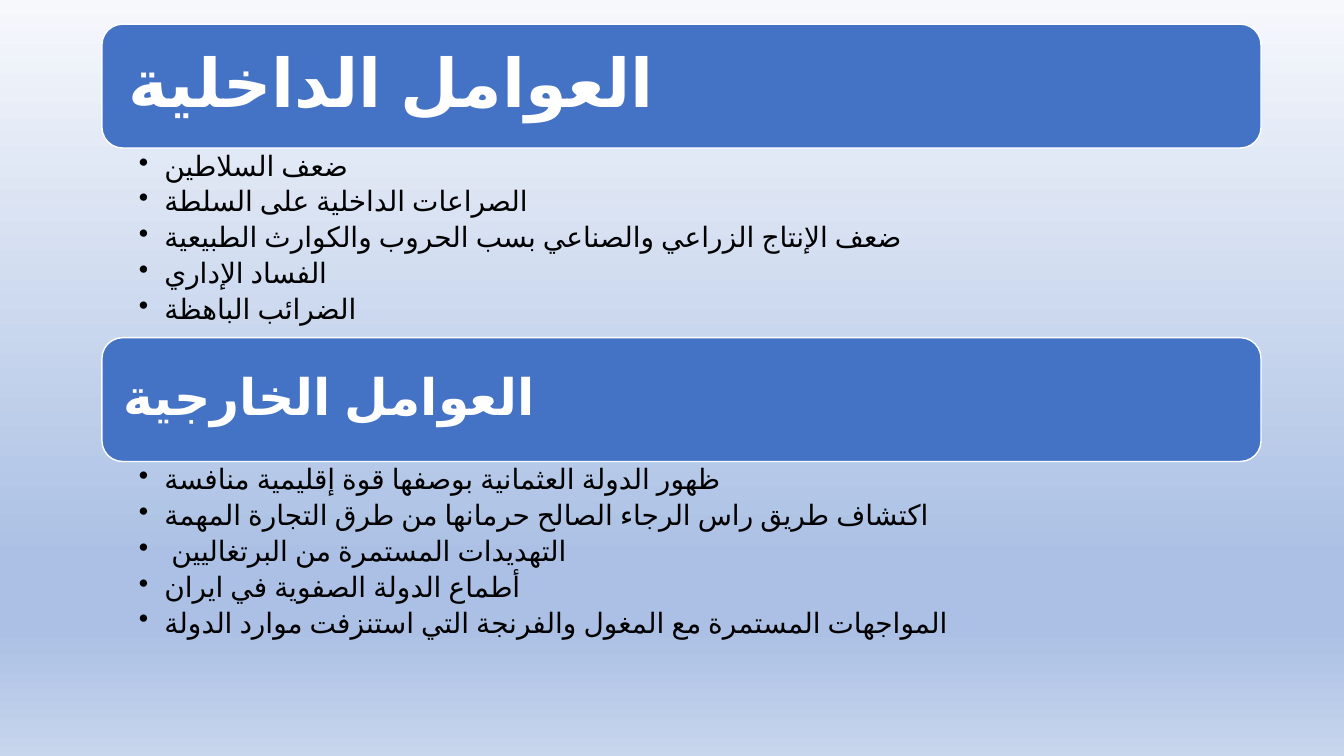
from dataclasses import dataclass

from lxml import etree
from pptx import Presentation
from pptx import util as u
from pptx.dml.color import RGBColor
from pptx.enum import lang, shapes, text
from pptx.oxml import ns

BLUE = RGBColor(0x44, 0x72, 0xC4)
WHITE = RGBColor(0xFF, 0xFF, 0xFF)
BLACK = RGBColor(0x00, 0x00, 0x00)
PALE_BLUE = RGBColor(0xF6, 0xF8, 0xFC)
MID_BLUE = RGBColor(0xAB, 0xC0, 0xE4)
LIGHT_BLUE = RGBColor(0xC7, 0xD5, 0xED)
BACKGROUND_STOPS = ((0, PALE_BLUE), (74, MID_BLUE), (83, MID_BLUE), (100, LIGHT_BLUE))

# Layout in centimetres
LEFT, TOP, WIDTH = 2.57, 0.61, 29.21
BANNER_HEIGHT, LIST_HEIGHT = 3.12, 4.78
TITLE_MARGIN = 0.15
BULLET_INDENT = 0.64


@dataclass(frozen=True)
class Section:
    title: str
    title_font: str
    title_size: int
    title_inset: float
    factors: tuple[str, ...]


SECTIONS = (
    Section("العوامل الداخلية", "Lato", 48, 0.51, (
        "ضعف السلاطين",
        "الصراعات الداخلية على السلطة",
        "ضعف الإنتاج الزراعي والصناعي بسب الحروب والكوارث الطبيعية",
        "الفساد الإداري",
        "الضرائب الباهظة",
    )),
    Section("العوامل الخارجية", "Calibri", 36, 0.38, (
        "ظهور الدولة العثمانية بوصفها قوة إقليمية منافسة",
        "اكتشاف طريق راس الرجاء الصالح حرمانها من طرق التجارة المهمة",
        " التهديدات المستمرة من البرتغاليين",
        "أطماع الدولة الصفوية في ايران",
        "المواجهات المستمرة مع المغول والفرنجة التي استنزفت موارد الدولة",
    )),
)


def add_child(parent, tag: str, **attributes: str):
    return etree.SubElement(parent, ns.qn(tag), attributes)


def paint_background(slide) -> None:
    fill = slide.background.fill
    fill.gradient()
    fill.gradient_angle = 270
    stops = slide.element.find(".//" + ns.qn("a:gsLst"))
    for stop in list(stops):
        stops.remove(stop)
    for percent, color in BACKGROUND_STOPS:
        stop = add_child(stops, "a:gs", pos=str(percent * 1000))
        add_child(stop, "a:srgbClr", val=str(color))


def add_text_frame(slide, left: float, top: float, width: float, height: float,
                   insets: tuple[float, float, float, float]):
    box = slide.shapes.add_textbox(u.Cm(left), u.Cm(top), u.Cm(width), u.Cm(height))
    frame = box.text_frame
    frame.word_wrap = True
    frame.margin_left, frame.margin_top, frame.margin_right, frame.margin_bottom = map(u.Cm, insets)
    return frame


def write_paragraph(paragraph, words: str, font_name: str, size: int, color: RGBColor,
                    bold: bool, space_after_percent: int) -> None:
    paragraph.alignment = text.PP_ALIGN.LEFT
    paragraph.line_spacing = 0.9
    properties = paragraph._p.get_or_add_pPr()
    spacing = add_child(properties, "a:spcAft")
    add_child(spacing, "a:spcPct", val=str(space_after_percent * 1000))
    run = paragraph.add_run()
    run.text = words
    run.font.name = font_name
    run.font.size = u.Pt(size)
    run.font.bold = bold
    run.font.color.rgb = color
    run.font.language_id = lang.MSO_LANGUAGE_ID.ARABIC


def add_bullet(paragraph) -> None:
    paragraph.level = 1
    properties = paragraph._p.get_or_add_pPr()
    properties.set("marL", str(u.Cm(BULLET_INDENT)))
    properties.set("indent", str(-u.Cm(BULLET_INDENT)))
    add_child(properties, "a:buChar", char="•")


def add_banner(slide, section: Section, top: float) -> None:
    banner = slide.shapes.add_shape(shapes.MSO_SHAPE.ROUNDED_RECTANGLE, u.Cm(LEFT),
                                    u.Cm(top), u.Cm(WIDTH), u.Cm(BANNER_HEIGHT))
    banner.shadow.inherit = False
    banner.fill.solid()
    banner.fill.fore_color.rgb = BLUE
    banner.line.color.rgb = WHITE
    banner.line.width = u.Pt(1)

    frame = add_text_frame(slide, LEFT + TITLE_MARGIN, top + TITLE_MARGIN,
                           WIDTH - 2 * TITLE_MARGIN, BANNER_HEIGHT - 2 * TITLE_MARGIN,
                           (section.title_inset,) * 4)
    frame.vertical_anchor = text.MSO_ANCHOR.MIDDLE
    write_paragraph(frame.paragraphs[0], section.title, section.title_font,
                    section.title_size, WHITE, True, 35)


def add_factors(slide, factors: tuple[str, ...], top: float) -> None:
    frame = add_text_frame(slide, LEFT, top, WIDTH, LIST_HEIGHT, (0.93, 0.1, 0.51, 0.1))
    for index, factor in enumerate(factors):
        paragraph = frame.add_paragraph() if index else frame.paragraphs[0]
        write_paragraph(paragraph, factor, "Calibri", 20, BLACK, False, 20)
        add_bullet(paragraph)


def main() -> None:
    presentation = Presentation()
    presentation.slide_width = u.Cm(33.87)
    presentation.slide_height = u.Cm(19.05)
    slide = presentation.slides.add_slide(presentation.slide_layouts[6])
    paint_background(slide)

    # Each banner sits directly on top of its list
    for index, section in enumerate(SECTIONS):
        top = TOP + index * (BANNER_HEIGHT + LIST_HEIGHT)
        add_banner(slide, section, top)
        add_factors(slide, section.factors, top + BANNER_HEIGHT)

    presentation.save("out.pptx")


if __name__ == "__main__":
    main()
